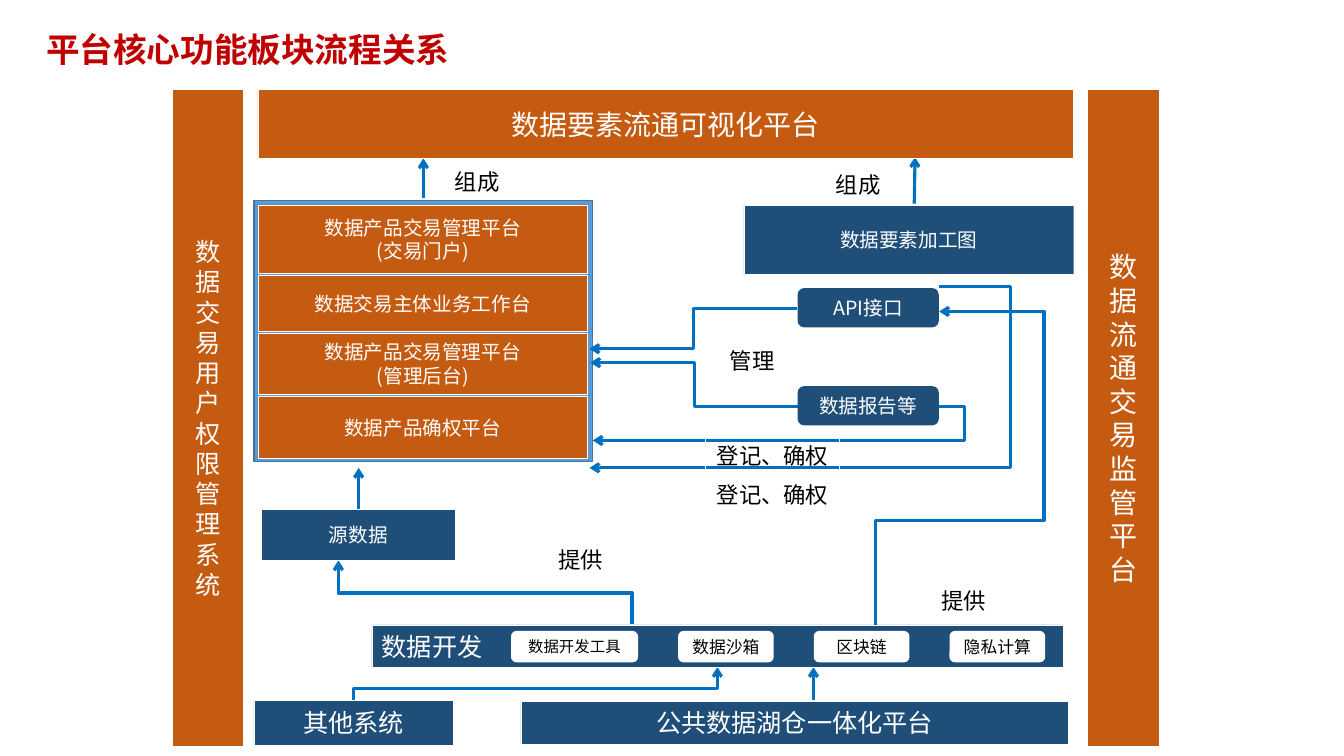
from dataclasses import dataclass
from typing import Optional

from lxml.etree import SubElement
from pptx import Presentation
from pptx.dml.color import RGBColor
from pptx.enum.shapes import MSO_CONNECTOR as Connector, MSO_SHAPE as Preset
from pptx.enum.text import MSO_ANCHOR as Anchor, PP_ALIGN as Align
from pptx.oxml.ns import qn
from pptx.util import Cm, Pt


@dataclass(frozen=True)
class Theme:
    font: str = "Noto Sans CJK SC"
    title: str = "C00000"
    orange: str = "C55A11"
    navy: str = "1F4E79"
    arrow: str = "0070C0"
    frame: str = "5B9BD5"
    frame_line: str = "43739E"
    white: str = "FFFFFF"
    black: str = "000000"
    title_size: float = 24
    banner_size: float = 20
    bar_size: float = 18
    label_size: float = 16
    body_size: float = 14
    chip_size: float = 12
    small_chip_size: float = 11
    thin: float = 0.25
    frame_width: float = 1
    arrow_width: float = 2.25


THEME = Theme()


@dataclass(frozen=True)
class Box:
    text: str
    left: float
    top: float
    width: float
    height: float
    fill: Optional[str] = THEME.navy
    size: float = THEME.body_size
    color: str = THEME.white
    line: Optional[str] = THEME.white
    line_width: float = THEME.thin
    rounded: bool = False
    align: Align = Align.CENTER


@dataclass(frozen=True)
class Route:
    """An arrow; bends are the absolute positions of its turns, in order."""
    start: tuple[float, float]
    end: tuple[float, float]
    bends: tuple[float, ...] = ()
    vertical_first: bool = False


def label(text: str, left: float, top: float, width: float, height: float) -> Box:
    return Box(text, left, top, width, height, fill=None,
               size=THEME.label_size, color=THEME.black)


def chip(text: str, left: float, width: float, size: float) -> Box:
    return Box(text, left, 15.9, width, 0.79, THEME.white, size, THEME.black,
               line=None, rounded=True)


def side_pillar(text: str, left: float, size: float) -> Box:
    return Box("\n".join(text), left, 2.26, 1.8, 16.54, THEME.orange, size)


def stacked_modules() -> list[Box]:
    modules = [("数据产品交易管理平台\n(交易门户)", 1.73), ("数据交易主体业务工作台", 1.4),
               ("数据产品交易管理平台\n(管理后台)", 1.55), ("数据产品确权平台", 1.55)]
    boxes, top = [], 5.16
    for text, height in modules:
        boxes.append(Box(text, 6.5, top, 8.31, height, THEME.orange))
        top += height + 0.05
    return boxes


FRAME = Box("", 6.4, 5.05, 8.53, 6.58, THEME.frame,
            line=THEME.frame_line, line_width=THEME.frame_width)

BOXES = [
    side_pillar("数据交易用户权限管理系统", 4.34, THEME.bar_size),
    side_pillar("数据流通交易监管平台", 27.41, THEME.banner_size),
    Box("数据要素流通可视化平台", 6.5, 2.26, 20.55, 1.73, THEME.orange, THEME.banner_size),
    *stacked_modules(),
    Box("数据要素加工图", 18.75, 5.18, 8.31, 1.73),
    Box("API接口", 20.1, 7.26, 3.56, 0.99, line=None, rounded=True),
    Box("数据报告等", 20.1, 9.73, 3.56, 0.99, line=None, rounded=True),
    Box("源数据", 6.58, 12.83, 4.9, 1.3),
    Box("数据开发", 9.37, 15.75, 17.42, 1.07, size=THEME.bar_size, align=Align.LEFT),
    Box("其他系统", 6.4, 17.65, 5.03, 1.12, size=THEME.bar_size),
    Box("公共数据湖仓一体化平台", 13.13, 17.68, 13.79, 1.07, size=THEME.bar_size),
    chip("数据开发工具", 12.88, 3.2, THEME.small_chip_size),
    *(chip(text, 17.09 + 3.42 * column, 2.41, THEME.chip_size)
      for column, text in enumerate(("数据沙箱", "区块链", "隐私计算"))),
    label("组成", 10.85, 4.14, 2.36, 0.89),
    label("组成", 20.45, 4.17, 2.36, 0.97),
    label("管理", 17.78, 8.59, 2.36, 0.97),
    label("登记、确权", 17.78, 11, 3.38, 0.97),
    label("登记、确权", 17.55, 11.96, 3.84, 1.02),
    label("提供", 13.41, 13.69, 2.46, 0.81),
    label("提供", 23.06, 14.73, 2.46, 0.81),
]

ROUTES = [
    Route((9.04, 12.83), (9.04, 11.79)),
    Route((10.67, 4.98), (10.67, 3.99)),
    Route((23.04, 5.13), (23.06, 3.96)),
    Route((20.5, 17.65), (20.5, 16.81)),
    Route((20.09, 7.77), (14.86, 8.79), (17.48,)),
    Route((20.12, 10.24), (14.88, 9.14), (17.5,)),
    Route((23.67, 7.21), (14.86, 11.79), (25.48,)),
    Route((23.65, 10.24), (14.94, 11.1), (24.31,)),
    Route((22.07, 16.13), (23.67, 7.85), (13.11, 26.31), vertical_first=True),
    Route((8.92, 17.65), (18.08, 16.81), (17.35,), vertical_first=True),
    Route((15.93, 15.72), (8.53, 14.12), (14.94,), vertical_first=True),
]


def write_text(shape, text: str, size: float, color: str, align: Align,
               bold: bool = False) -> None:
    frame = shape.text_frame
    frame.text = text
    frame.word_wrap = True
    frame.vertical_anchor = Anchor.MIDDLE
    for paragraph in frame.paragraphs:
        paragraph.alignment = align
        for run in paragraph.runs:
            run.font.size = Pt(size)
            run.font.bold = bold
            run.font.color.rgb = RGBColor.from_string(color)
            run.font.name = THEME.font
            SubElement(run.font._element, qn("a:ea"), typeface=THEME.font)


def draw_box(slide, box: Box) -> None:
    preset = Preset.ROUNDED_RECTANGLE if box.rounded else Preset.RECTANGLE
    shape = slide.shapes.add_shape(preset, Cm(box.left), Cm(box.top),
                                   Cm(box.width), Cm(box.height))
    shape.shadow.inherit = False
    if box.fill:
        shape.fill.solid()
        shape.fill.fore_color.rgb = RGBColor.from_string(box.fill)
    else:
        shape.fill.background()
    if box.line:
        shape.line.color.rgb = RGBColor.from_string(box.line)
        shape.line.width = Pt(box.line_width)
    else:
        shape.line.fill.background()
    if box.text:
        write_text(shape, box.text, box.size, box.color, box.align)


def draw_route(slide, route: Route) -> None:
    """Draw an arrow; one that leaves vertically is laid out flat, then turned by 90°."""
    (x1, y1), (x2, y2) = route.start, route.end
    begin, end = route.start, route.end
    if route.vertical_first:
        center_x, center_y = (x1 + x2) / 2, (y1 + y2) / 2
        half_x, half_y = (y2 - y1) / 2, (x1 - x2) / 2
        begin = (center_x - half_x, center_y - half_y)
        end = (center_x + half_x, center_y + half_y)
    kind = Connector.ELBOW if route.bends else Connector.STRAIGHT
    connector = slide.shapes.add_connector(kind, *map(Cm, begin + end))
    connector.line.color.rgb = RGBColor.from_string(THEME.arrow)
    connector.line.width = Pt(THEME.arrow_width)
    properties = connector._element.spPr
    SubElement(properties.find(qn("a:ln")), qn("a:tailEnd"), type="arrow")
    SubElement(properties, qn("a:effectLst"))
    if route.vertical_first:
        properties.find(qn("a:xfrm")).set("rot", "5400000")
    if route.bends:
        geometry = properties.find(qn("a:prstGeom"))
        geometry.set("prst", f"bentConnector{len(route.bends) + 2}")
        guides = geometry.find(qn("a:avLst"))
        for number, bend in enumerate(route.bends, start=1):
            along_y = route.vertical_first == (number == 1)
            first, last = (y1, y2) if along_y else (x1, x2)
            share = round((bend - first) / (last - first) * 100000)
            SubElement(guides, qn("a:gd"), name=f"adj{number}", fmla=f"val {share}")


def main() -> None:
    presentation = Presentation()
    presentation.slide_width, presentation.slide_height = Cm(33.87), Cm(19.05)
    slide = presentation.slides.add_slide(presentation.slide_layouts[5])
    title = slide.shapes.title
    title.left, title.top, title.width, title.height = Cm(0.91), Cm(0.66), Cm(27.79), Cm(1.17)
    write_text(title, "平台核心功能板块流程关系", THEME.title_size, THEME.title,
               Align.LEFT, bold=True)
    draw_box(slide, FRAME)
    for route in ROUTES:
        draw_route(slide, route)
    for box in BOXES:
        draw_box(slide, box)
    presentation.save("out.pptx")


if __name__ == "__main__":
    main()
